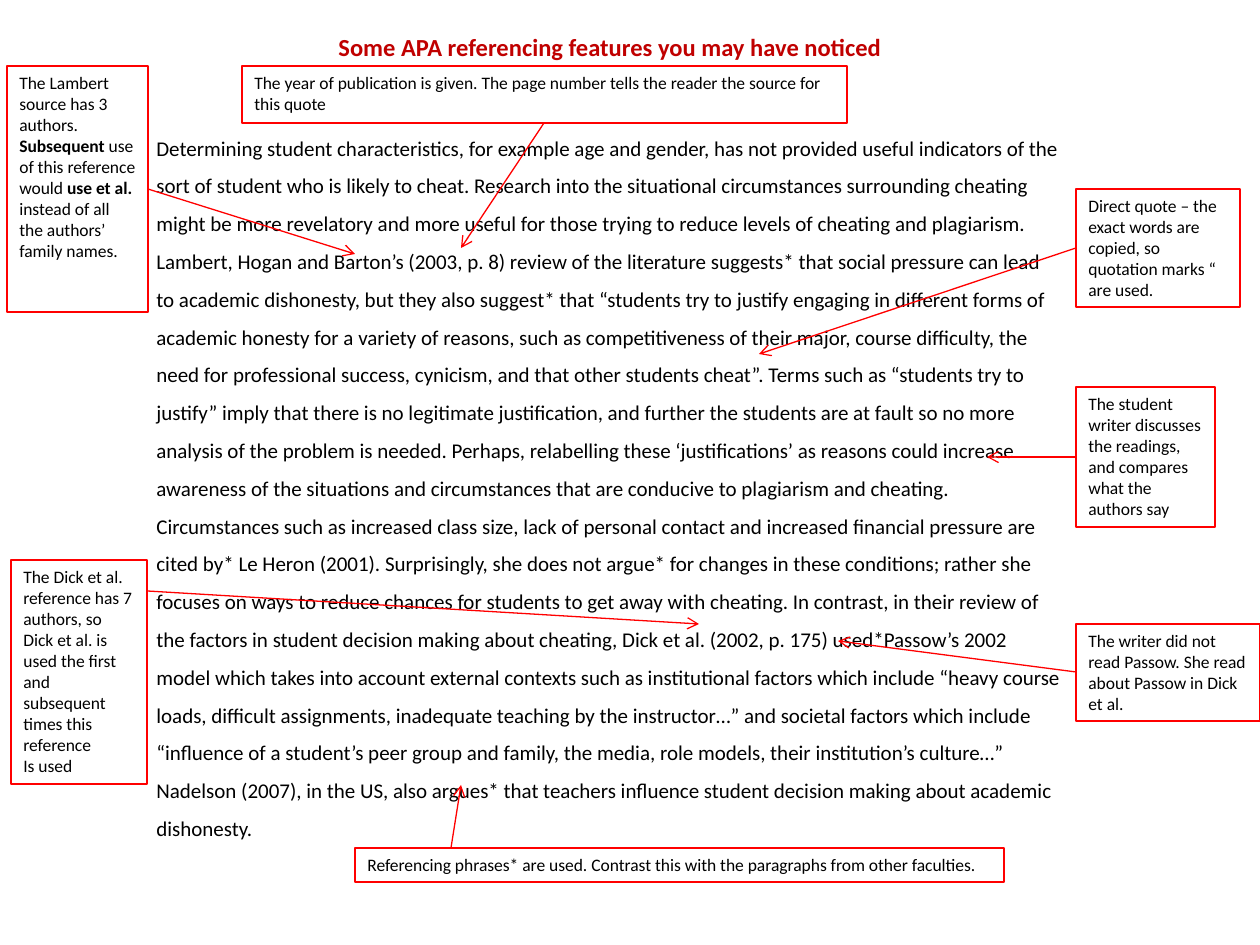
from lxml.etree import SubElement
from pptx import Presentation
from pptx.dml.color import RGBColor
from pptx.enum.shapes import MSO_CONNECTOR as LINK, MSO_SHAPE as SHAPE
from pptx.enum.text import MSO_ANCHOR as ANCHOR, PP_ALIGN as ALIGN
from pptx.oxml.ns import qn
from pptx.util import Pt

PX = 914400 / 126
RED, DARK, BLACK = "FF0000", "C00000", "000000"

TITLE = "Some APA referencing features you may have noticed"
ESSAY = [
    "Determining student characteristics, for example age and gender, has not provided useful "
    "indicators of the sort of student who is likely to cheat. Research into the situational "
    "circumstances surrounding cheating might be more revelatory and more useful for those trying "
    "to reduce levels of cheating and plagiarism.",
    "Lambert, Hogan and Barton’s (2003, p. 8) review of the literature suggests* that social "
    "pressure can lead to academic dishonesty, but they also suggest* that “students try to "
    "justify engaging in different forms of academic honesty for a variety of reasons, such as "
    "competitiveness of their major, course difficulty, the need for professional success, "
    "cynicism, and that other students cheat”.",
    "Terms such as “students try to justify” imply that there is no legitimate justification, and "
    "further the students are at fault so no more analysis of the problem is needed. Perhaps, "
    "relabelling these ‘justifications’ as reasons could increase awareness of the situations and "
    "circumstances that are conducive to plagiarism and cheating.",
    "Circumstances such as increased class size, lack of personal contact and increased financial "
    "pressure are cited by* Le Heron (2001). Surprisingly, she does not argue* for changes in "
    "these conditions; rather she focuses on ways to reduce chances for students to get away with "
    "cheating.",
    "In contrast, in their review of the factors in student decision making about cheating, Dick "
    "et al. (2002, p. 175) used*Passow’s 2002 model which takes into account external contexts "
    "such as institutional factors which include “heavy course loads, difficult assignments, "
    "inadequate teaching by the instructor…” and societal factors which include “influence of a "
    "student’s peer group and family, the media, role models, their institution’s culture…”",
    "Nadelson (2007), in the US, also argues* that teachers influence student decision making "
    "about academic dishonesty.",
]

# Box, line width, paragraphs of runs (every second run is bold), arrow from and to
NOTES = [
    ((7, 66, 141, 246), 1.5,
     [["The Lambert source has 3 authors. ", "Subsequent", " use of this reference would ",
       "use et al. ", "instead of all the authors’ family names."]],
     (148, 189), (355, 254)),
    ((1076, 189, 164, 118), 1,
     [["Direct quote – the exact words are copied, so quotation marks “ are used."]],
     (1076, 248), (759, 354)),
    ((242, 66, 605, 57), 1,
     [["The year of publication is given. The page number tells the reader the source for "
       "this quote"]],
     (544, 123), (461, 248)),
    ((1076, 624, 184, 97), 1,
     [["The writer did not read Passow. She read about Passow in Dick et al."]],
     (1076, 672), (838, 641)),
    ((355, 848, 649, 34), 1,
     [["Referencing phrases* are used. Contrast this with the paragraphs from other faculties."]],
     (451, 848), (461, 785)),
    ((1076, 387, 139, 140), 1.5,
     [["The student writer discusses the readings, and compares what the authors say"]],
     (1076, 457), (987, 457)),
    ((11, 560, 136, 224), 1,
     [["The Dick et al. reference has 7 authors, so Dick et al. is used the first and "
       "subsequent times this reference"], ["Is used"]],
     (147, 591), (699, 624)),
]


def emu(*vals):
    return [round(v * PX) for v in vals]


def color(hex_):
    return RGBColor.from_string(hex_)


def write(shape, paras, size, ink=BLACK, bold=False, align=ALIGN.LEFT, gap=1.0,
          anchor=ANCHOR.TOP):
    frame = shape.text_frame
    left, top = emu(12.6, 6.3)
    look = {"word_wrap": True, "vertical_anchor": anchor, "margin_left": left,
            "margin_right": left, "margin_top": top, "margin_bottom": top}
    for key, val in look.items():
        setattr(frame, key, val)
    for i, parts in enumerate(paras):
        para = frame.add_paragraph() if i else frame.paragraphs[0]
        for key, val in {"alignment": align, "line_spacing": gap}.items():
            setattr(para, key, val)
        for j, part in enumerate(parts):
            run = para.add_run()
            run.text = part
            face = {"name": "Calibri", "size": Pt(size), "bold": bold or j % 2 == 1}
            for key, val in face.items():
                setattr(run.font, key, val)
            run.font.color.rgb = color(ink)


def add_title(slide, box):
    title = slide.shapes.title
    title.left, title.top, title.width, title.height = emu(*box)
    write(title, [[TITLE]], 14, DARK, True, ALIGN.CENTER)


def add_essay(slide, box):
    essay = slide.shapes.add_textbox(*emu(*box))
    write(essay, [[" ".join(ESSAY)]], 12, gap=1.5, anchor=ANCHOR.BOTTOM)


def add_note(slide, box, width, paras):
    note = slide.shapes.add_shape(SHAPE.RECTANGLE, *emu(*box))
    note.shadow.inherit = False
    note.fill.background()
    note.line.color.rgb = color(RED)
    note.line.width = Pt(width)
    write(note, paras, 10)


def add_arrow(slide, start, end):
    arrow = slide.shapes.add_connector(LINK.STRAIGHT, *emu(*start, *end))
    arrow.line.color.rgb = color(RED)
    arrow.line.width = Pt(0.75)
    props = arrow._element.spPr
    SubElement(props.find(qn("a:ln")), qn("a:tailEnd"), type="arrow")
    SubElement(props, qn("a:effectLst"))


def main():
    deck = Presentation()
    deck.slide_width, deck.slide_height = emu(1260, 945)
    slide = deck.slides.add_slide(deck.slide_layouts[5])
    add_title(slide, (144, 26, 932, 42))
    add_essay(slide, (144, 117, 932, 730))
    for box, width, paras, *_ in NOTES:
        add_note(slide, box, width, paras)
    for *_, start, end in NOTES:
        add_arrow(slide, start, end)
    deck.save("out.pptx")


if __name__ == "__main__":
    main()
